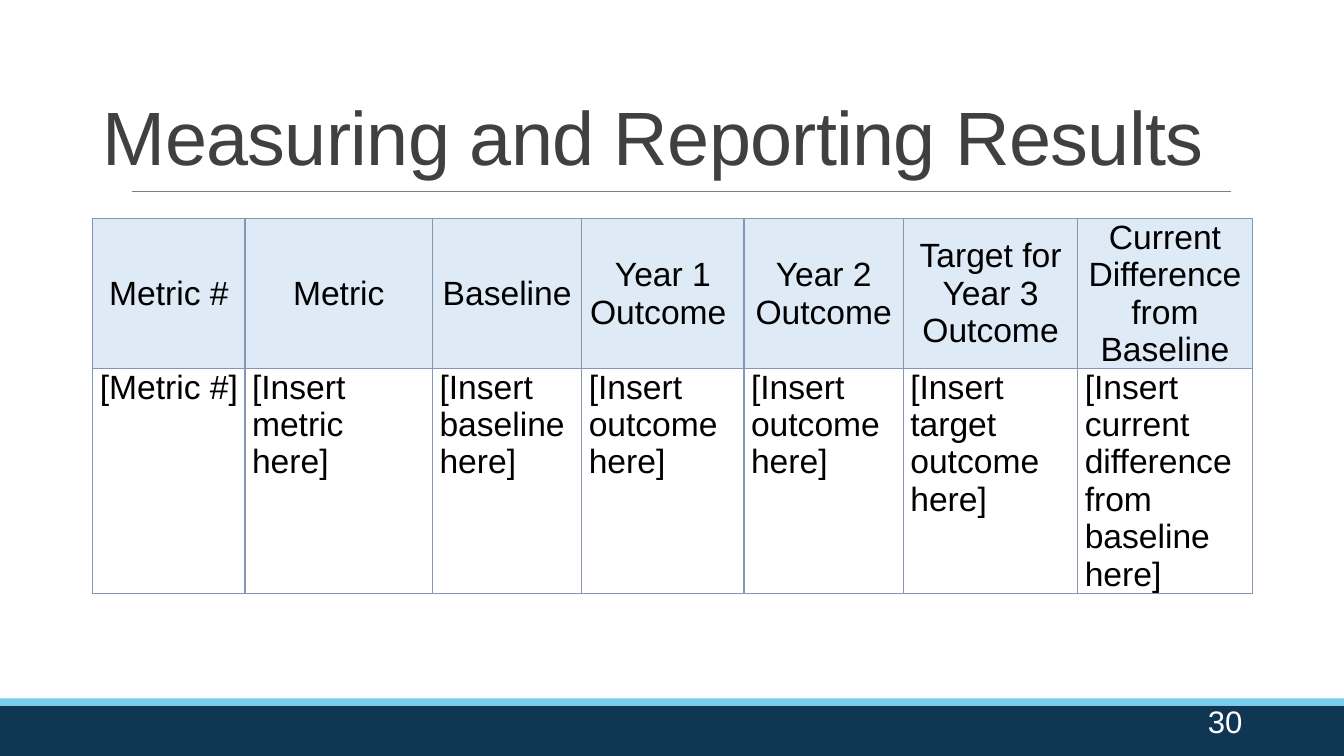
from lxml import etree
from pptx import Presentation
from pptx.dml.color import RGBColor
from pptx.enum.shapes import MSO_CONNECTOR, MSO_SHAPE
from pptx.enum.text import MSO_ANCHOR, MSO_AUTO_SIZE, PP_ALIGN
from pptx.oxml.ns import qn
from pptx.util import Inches, Pt

LEFT, CENTER, RIGHT = PP_ALIGN.LEFT, PP_ALIGN.CENTER, PP_ALIGN.RIGHT
TOP, MIDDLE, BOTTOM = MSO_ANCHOR.TOP, MSO_ANCHOR.MIDDLE, MSO_ANCHOR.BOTTOM
RECT, STRAIGHT = MSO_SHAPE.RECTANGLE, MSO_CONNECTOR.STRAIGHT
NO_FIT = MSO_AUTO_SIZE.NONE
TITLE_ONLY = 5

WIDTHS = [1.51, 1.86, 1.48, 1.61, 1.58, 1.73, 1.73]
HEIGHTS = [1.47, 2.19]
HEADS = ["Metric #", "Metric", "Baseline", "Year 1 Outcome ", "Year 2 Outcome ",
         "Target for Year 3 Outcome", "Current Difference from Baseline"]
ITEMS = ["metric", "baseline", "outcome", "outcome", "target outcome",
         "current difference from baseline"]
ENTRIES = ["[Metric #]"] + [f"[Insert {item} here]" for item in ITEMS]


def color(code):
    return RGBColor.from_string(code)


def write(frame, text, size=24, ink="000000", align=LEFT, after=6, line=1.0, track=0):
    """Put one formatted paragraph in a text frame; track is in points."""
    para = frame.paragraphs[0]
    para.alignment = align
    para.space_before, para.space_after = Pt(0), Pt(after)
    para.line_spacing = line
    run = para.add_run()
    run.text = text
    run.font.name, run.font.size = "Arial", Pt(size)
    run.font.color.rgb = color(ink)
    if track:
        run.font._element.set("spc", str(round(track * 100)))


def border(cell, code, width):
    """Draw all four edges of a table cell."""
    props = cell._tc.get_or_add_tcPr()
    for spot, side in enumerate(("a:lnL", "a:lnR", "a:lnT", "a:lnB")):
        edge = etree.Element(qn(side), w=str(Pt(width)))
        fill = etree.SubElement(edge, qn("a:solidFill"))
        etree.SubElement(fill, qn("a:srgbClr"), val=code)
        props.insert(spot, edge)


class Page:
    navy, sky, pale = "0F3753", "77CEEF", "DEEAF6"
    gray, slate, edge, white = "808080", "404040", "8496B0", "FFFFFF"

    def __init__(self, deck):
        self.slide = deck.slides.add_slide(deck.slide_layouts[TITLE_ONLY])
        self.shapes = self.slide.shapes
        self.slide.background.fill.solid()
        self.slide.background.fill.fore_color.rgb = color(self.white)

    def band(self, top, high, code):
        bar = self.shapes.add_shape(RECT, 0, Inches(top), Inches(13.33), Inches(high))
        bar.shadow.inherit = False
        bar.fill.solid()
        bar.fill.fore_color.rgb = color(code)
        bar.line.fill.background()

    def rule(self, left, right, top):
        line = self.shapes.add_connector(STRAIGHT, Inches(left), Inches(top),
                                         Inches(right), Inches(top))
        line.line.color.rgb, line.line.width = color(self.gray), Pt(0.5)
        etree.SubElement(line._element.spPr, qn("a:effectLst"))

    def title(self, text, left, top, wide, high):
        box = self.shapes.title
        box.left, box.top = Inches(left), Inches(top)
        box.width, box.height = Inches(wide), Inches(high)
        frame = box.text_frame
        frame.word_wrap, frame.auto_size = True, NO_FIT
        frame.vertical_anchor = BOTTOM
        write(frame, text, size=54, ink=self.slate, after=0, line=0.85, track=-0.5)

    def number(self, text, left, top, wide, high):
        box = self.shapes.add_textbox(Inches(left), Inches(top), Inches(wide), Inches(high))
        frame = box.text_frame
        frame.word_wrap, frame.vertical_anchor = True, MIDDLE
        write(frame, text, size=22.2, ink=self.white, align=RIGHT)

    def table(self, rows, left, top):
        grid = self.shapes.add_table(len(rows), len(WIDTHS), Inches(left), Inches(top),
                                     Inches(sum(WIDTHS)), Inches(sum(HEIGHTS))).table
        grid.horz_banding = False
        for col, wide in zip(grid.columns, WIDTHS):
            col.width = Inches(wide)
        for r, texts in enumerate(rows):
            grid.rows[r].height = Inches(HEIGHTS[r])
            for c, text in enumerate(texts):
                self.cell(grid.cell(r, c), text, r == 0)

    def cell(self, cell, text, head):
        cell.margin_left = cell.margin_right = Inches(0.07)
        cell.margin_top = cell.margin_bottom = 0
        cell.vertical_anchor = MIDDLE if head else TOP
        if head:
            cell.fill.solid()
            cell.fill.fore_color.rgb = color(self.pale)
        else:
            cell.fill.background()
        border(cell, self.edge, 1)
        write(cell.text_frame, text, align=CENTER if head else LEFT)


def main():
    deck = Presentation()
    deck.slide_width, deck.slide_height = Inches(13.33), Inches(7.5)
    page = Page(deck)
    page.band(7, 0.5, page.navy)
    page.band(6.93, 0.07, page.sky)
    page.rule(1.31, 12.21, 1.9)
    page.title("Measuring and Reporting Results", 0.92, 0.4, 11.5, 1.45)
    page.table([HEADS, ENTRIES], 0.92, 2.17)
    page.number("30", 9.42, 6.95, 3, 0.4)
    deck.save("out.pptx")


if __name__ == "__main__":
    main()
